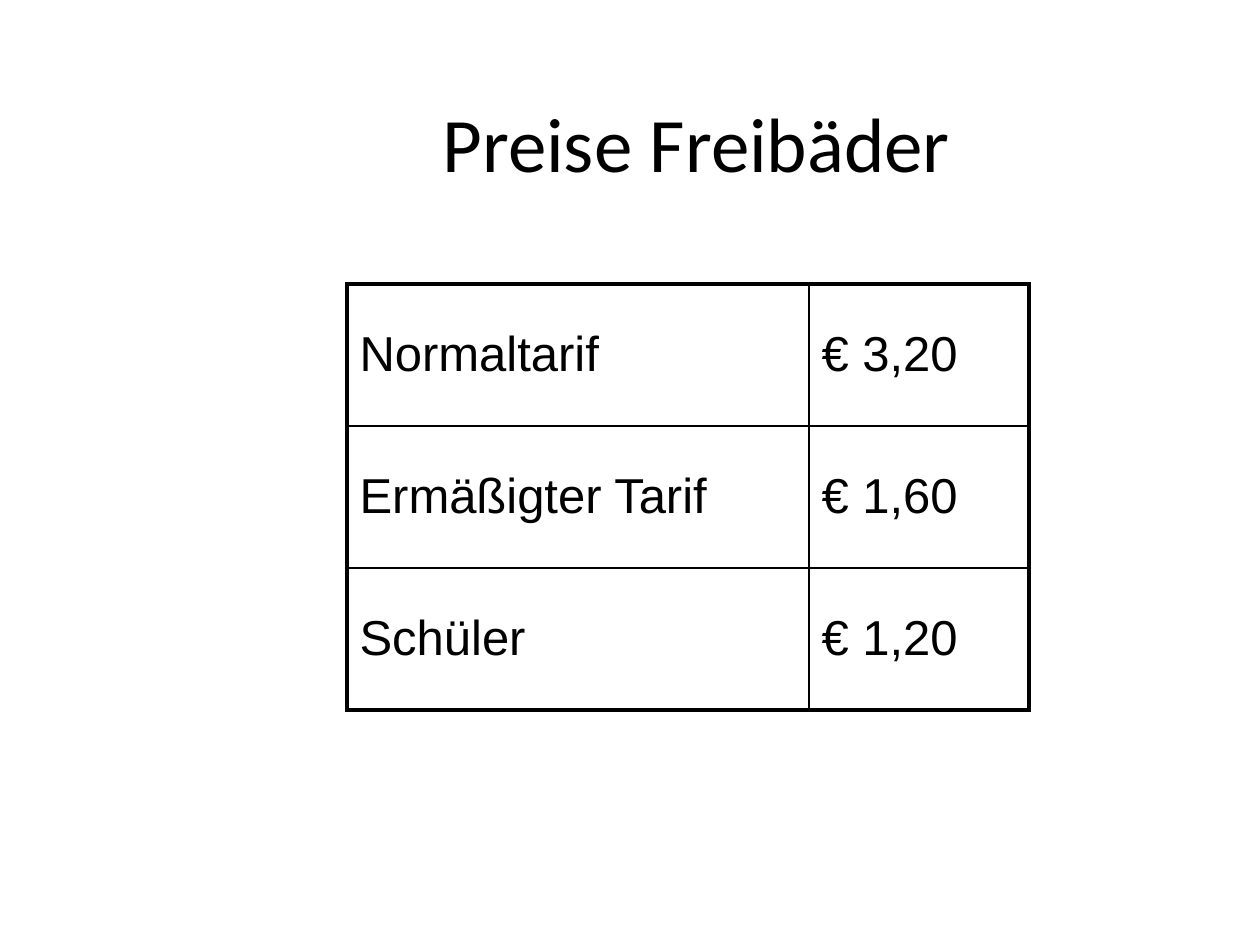
from lxml.etree import SubElement
from pptx import Presentation
from pptx.dml.color import RGBColor
from pptx.enum.text import MSO_ANCHOR, PP_ALIGN
from pptx.oxml.ns import qn
from pptx.util import Emu, Pt

BLACK = "000000"
WHITE = "FFFFFF"
THICK, THIN = 2.25, 1
TARIFFS = [
    ("Normaltarif", "€ 3,20"),
    ("Ermäßigter Tarif", "€ 1,60"),
    ("Schüler", "€ 1,20"),
]


def px(length):
    return Emu(round(length * 914400 / 126))


def color(value):
    return RGBColor.from_string(value)


def write(frame, text, font="Arial", size=28, ink=BLACK, align=PP_ALIGN.LEFT):
    frame.word_wrap = True
    paragraph = frame.paragraphs[0]
    paragraph.alignment = align
    run = paragraph.add_run()
    run.text = text
    run.font.name = font
    run.font.size = Pt(size)
    run.font.color.rgb = color(ink)


class PriceSlide:
    title_font = "Calibri"
    ink = BLACK
    paper = WHITE

    def __init__(self, deck):
        self.slide = deck.slides.add_slide(deck.slide_layouts[6])
        fill = self.slide.background.fill
        fill.solid()
        fill.fore_color.rgb = color(self.paper)

    def title(self, text, left, top, width, height):
        heading = self.slide.shapes.add_textbox(px(left), px(top), px(width), px(height))
        heading.text_frame.vertical_anchor = MSO_ANCHOR.MIDDLE
        write(heading.text_frame, text, font=self.title_font, size=44,
              ink=self.ink, align=PP_ALIGN.CENTER)

    def border(self, cell, side, points):
        line = SubElement(cell._tc.get_or_add_tcPr(), qn(f"a:ln{side}"), w=str(Pt(points)))
        SubElement(SubElement(line, qn("a:solidFill")), qn("a:srgbClr"), val=self.ink)

    def table(self, entries, left, top, widths, row_height):
        rows, columns = len(entries), len(widths)
        prices = self.slide.shapes.add_table(
            rows, columns, px(left), px(top), px(sum(widths)), px(rows * row_height)).table
        prices.first_row = prices.horz_banding = False
        for column, width in zip(prices.columns, widths):
            column.width = px(width)
        for r, entry in enumerate(entries):
            prices.rows[r].height = px(row_height)
            for c, text in enumerate(entry):
                cell = prices.cell(r, c)
                cell.vertical_anchor = MSO_ANCHOR.MIDDLE
                write(cell.text_frame, text, ink=self.ink)
                outer = {"L": c == 0, "R": c == columns - 1, "T": r == 0, "B": r == rows - 1}
                for side, is_outer in outer.items():
                    self.border(cell, side, THICK if is_outer else THIN)
                cell.fill.background()


def main():
    deck = Presentation()
    deck.slide_width, deck.slide_height = px(1260), px(945)
    page = PriceSlide(deck)
    page.title("Preise Freibäder", 161, 63, 1071, 158)
    page.table(TARIFFS, 347, 284, [462, 220], 142)
    deck.save("out.pptx")


if __name__ == "__main__":
    main()
